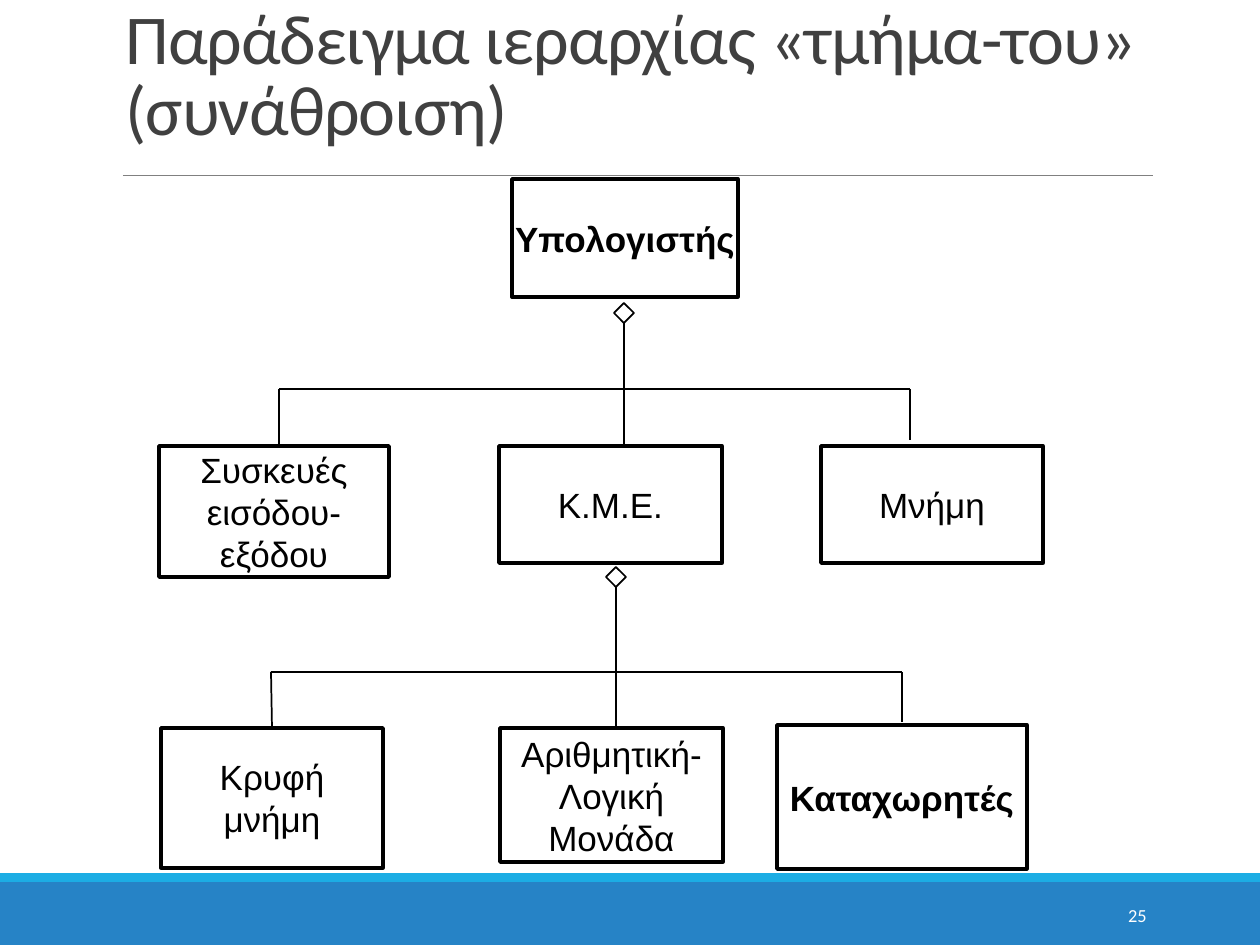
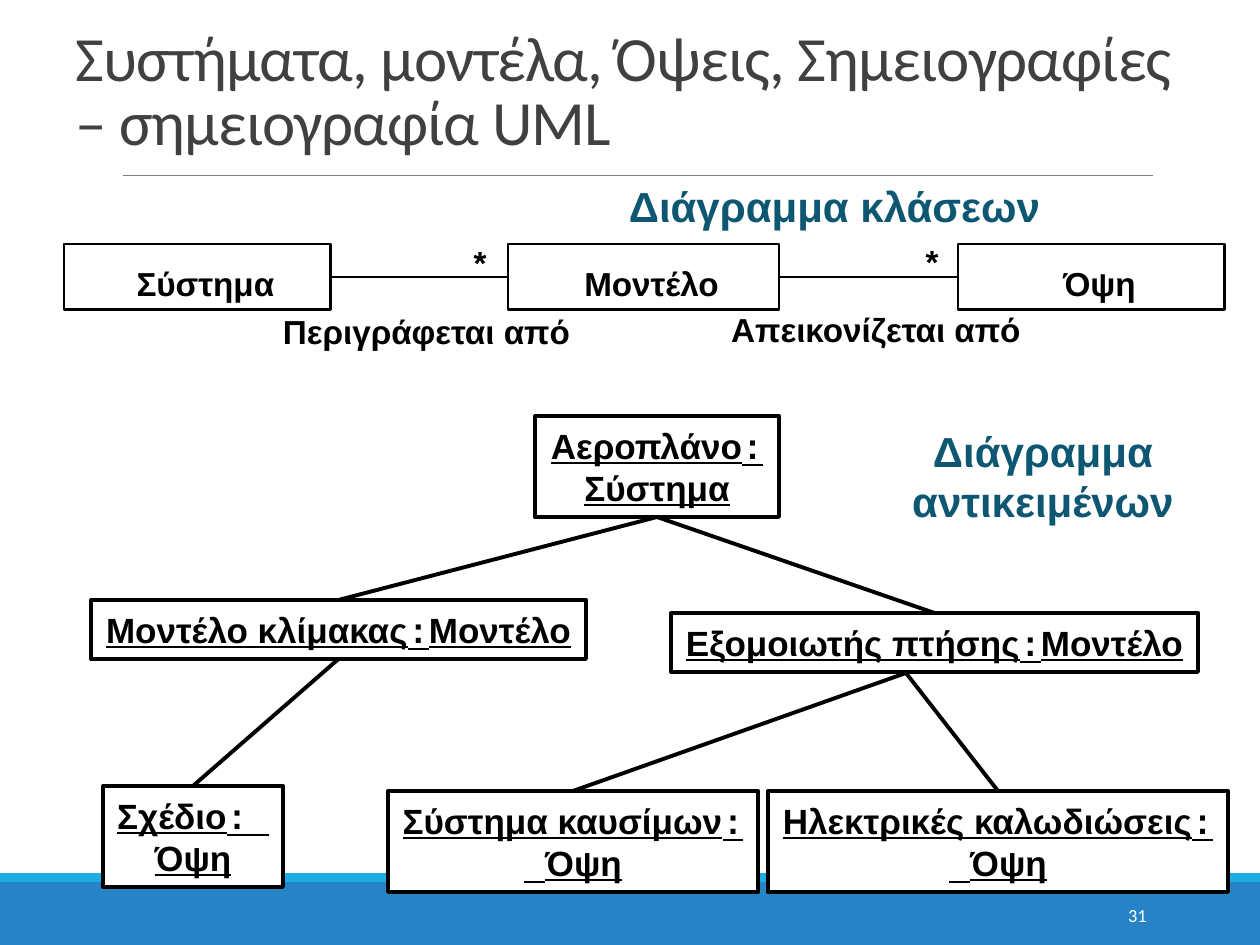
from lxml import etree
from pptx import Presentation
from pptx.dml.color import RGBColor
from pptx.enum.shapes import MSO_CONNECTOR, MSO_SHAPE
from pptx.enum.text import MSO_ANCHOR, PP_ALIGN
from pptx.oxml.ns import qn
from pptx.util import Emu, Pt

RECT, DIAMOND = MSO_SHAPE.RECTANGLE, MSO_SHAPE.DIAMOND
STRAIGHT = MSO_CONNECTOR.STRAIGHT
TOP, MIDDLE, BOTTOM = MSO_ANCHOR.TOP, MSO_ANCHOR.MIDDLE, MSO_ANCHOR.BOTTOM
LEFT, CENTER, RIGHT = PP_ALIGN.LEFT, PP_ALIGN.CENTER, PP_ALIGN.RIGHT
SIDE_TOP, SIDE_LEFT, SIDE_BOTTOM, SIDE_RIGHT = range(4)

PX_PER_INCH = 126
WIDTH, HEIGHT = 1260, 945
BLACK, WHITE = "000000", "FFFFFF"
BLUE, CYAN = "2683C6", "1CADE4"
TITLE_GREY, RULE_GREY, HEADING_TEAL = "404040", "808080", "0E5772"
SANS, BODY, MONO = "Calibri", "Arial", "Courier New"


def px(n):
    return Emu(round(n * 914400 / PX_PER_INCH))


def rgb(hex_color):
    return RGBColor.from_string(hex_color)


def add_run(p, text, size, font=BODY, color=BLACK, bold=False, underline=False):
    r = p.add_run()
    r.text = text
    f = r.font
    f.name, f.size, f.bold, f.underline = font, Pt(size), bold, underline
    f.color.rgb = rgb(color)
    return r


def set_frame(sp, anchor, align, wrap, inset=True):
    """Prepare the text frame and return its first paragraph."""
    tf = sp.text_frame
    tf.word_wrap = wrap
    tf.vertical_anchor = anchor
    if not inset:
        tf.margin_left = tf.margin_right = tf.margin_top = tf.margin_bottom = 0
    p = tf.paragraphs[0]
    p.alignment = align
    return p


def add_text(slide, box, text, size, anchor=MIDDLE, align=CENTER, wrap=True,
             inset=True, **style):
    sp = slide.shapes.add_textbox(*map(px, box))
    p = set_frame(sp, anchor, align, wrap, inset)
    return p, add_run(p, text, size, **style)


def add_label(slide, box, text, font=BODY):
    add_text(slide, box, text, 19, anchor=TOP, wrap=False, inset=False,
             font=font, bold=True)


def add_box(slide, box, line_width=0, fill=None, kind=RECT):
    sp = slide.shapes.add_shape(kind, *map(px, box))
    sp.shadow.inherit = False
    if fill:
        sp.fill.solid()
        sp.fill.fore_color.rgb = rgb(fill)
    else:
        sp.fill.background()
    if line_width:
        sp.line.color.rgb = rgb(BLACK)
        sp.line.width = Pt(line_width)
    else:
        sp.line.fill.background()
    return sp


def add_line(slide, start, end, width, color=BLACK, begin=None, finish=None):
    """Draw a line; begin and finish are (shape, side) pairs to join."""
    line = slide.shapes.add_connector(STRAIGHT, *map(px, start + end))
    line.line.color.rgb = rgb(color)
    line.line.width = Pt(width)
    etree.SubElement(line._element.spPr, qn("a:effectLst"))
    if begin:
        line.begin_connect(*begin)
    if finish:
        line.end_connect(*finish)


def add_base(prs, title, title_box, title_size, number):
    """Add a slide with bands, rule, title and slide number."""
    slide = prs.slides.add_slide(prs.slide_layouts[6])
    add_box(slide, (0, 882, WIDTH, 63), fill=BLUE)
    add_box(slide, (0, 873, WIDTH, 9), fill=CYAN)
    add_line(slide, (123, 175), (1153, 175), 0.5, RULE_GREY)
    p, r = add_text(slide, title_box, title, title_size, anchor=BOTTOM,
                    align=LEFT, font=SANS, color=TITLE_GREY)
    p.line_spacing = 0.85
    r.font._element.set("spc", "-50")
    add_text(slide, (1023, 890, 136, 50), number, 10.5, align=RIGHT,
             font=SANS, color=WHITE)
    return slide


def add_part(slide, box, text, bold=False):
    sp = add_box(slide, box, 2)
    p = set_frame(sp, MIDDLE, CENTER, wrap=not bold)
    add_run(p, text, 20, bold=bold)
    return sp


def add_aggregation(slide, x, top, bar_y, ends, left_part=None):
    """Draw a diamond, its stem and a bar with a drop at each end."""
    left, right = x - 345, x + 286
    left_end, stem_end, right_end = ends
    diamond = add_box(slide, (x - 10, top, 20, 20), 1, kind=DIAMOND)
    add_line(slide, (x, top + 20), (x, stem_end), 1,
             begin=(diamond, SIDE_BOTTOM))
    add_line(slide, (left, bar_y), (right, bar_y), 1)
    add_line(slide, (left, bar_y), (left, left_end), 1,
             finish=left_part and (left_part, SIDE_TOP))
    add_line(slide, (right, bar_y), (right, right_end), 1)


def add_class(slide, x, width, name):
    sp = add_box(slide, (x, 244, width, 66), 1.63)
    add_label(slide, (x + 8, 263, width, 40), name)
    return sp


def add_association(slide, source, target, star_box, caption, caption_box):
    add_line(slide, (0, 0), (0, 0), 1.63,
             begin=(source, SIDE_RIGHT), finish=(target, SIDE_LEFT))
    add_label(slide, star_box, "*", MONO)
    add_label(slide, caption_box, caption)


def add_object(slide, box, name, separator, class_name):
    """Add an underlined "name:class" box; a newline breaks the line."""
    sp = add_box(slide, box, 2.25, WHITE)
    p = set_frame(sp, MIDDLE, CENTER, wrap=False)
    style = {"bold": True, "underline": True}
    add_run(p, name, 20, **style)
    for i, piece in enumerate(separator.split("\n")):
        if i:
            p.add_line_break()
        if piece:
            add_run(p, piece, 20, font=MONO, **style)
    add_run(p, class_name, 20, **style)
    return sp


def add_link(slide, parent, child, start=None):
    """Link a parent's bottom, or a given start point, to a child's top."""
    add_line(slide, start or (0, 0), (0, 0), 2.25,
             begin=None if start else (parent, SIDE_BOTTOM),
             finish=(child, SIDE_TOP))


def add_heading(slide, box, text):
    add_text(slide, box, text, 24, color=HEADING_TEAL, bold=True)


def build_part_hierarchy(prs):
    slide = add_base(prs, "Παράδειγμα ιεραρχίας «τμήμα-του» (συνάθροιση)",
                     (113, 39, 1040, 117), 40, "25")
    add_part(slide, (512, 179, 226, 118), "Υπολογιστής", bold=True)
    add_part(slide, (159, 446, 230, 131), "Συσκευές εισόδου-εξόδου")
    add_part(slide, (499, 446, 223, 117), "Κ.Μ.Ε.")
    add_part(slide, (821, 446, 222, 117), "Μνήμη")
    cache = add_part(slide, (161, 728, 222, 140), "Κρυφή μνήμη")
    add_part(slide, (500, 728, 223, 134), "Αριθμητική-Λογική Μονάδα")
    add_part(slide, (777, 725, 250, 144), "Καταχωρητές", bold=True)
    add_aggregation(slide, 624, 303, 389, (445, 446, 440))
    add_aggregation(slide, 616, 567, 672, (728, 728, 722), cache)


def build_uml_notation(prs):
    slide = add_base(
        prs, "Συστήματα, μοντέλα, Όψεις, Σημειογραφίες – σημειογραφία UML",
        (63, 8, 1134, 157), 36, "31")

    add_heading(slide, (616, 174, 437, 63), "Διάγραμμα κλάσεων")
    system = add_class(slide, 64, 267, "Σύστημα")
    model = add_class(slide, 508, 271, "Μοντέλο")
    view = add_class(slide, 958, 267, "Όψη")
    add_association(slide, system, model, (470, 243, 20, 40),
                    "Περιγράφεται από", (282, 311, 289, 40))
    add_association(slide, model, view, (922, 242, 20, 40),
                    "Απεικονίζεται από", (730, 309, 292, 40))

    add_heading(slide, (878, 422, 330, 107), "Διάγραμμα αντικειμένων")
    plane = add_object(slide, (535, 416, 244, 101), "Αεροπλάνο", ":\n", "Σύστημα")
    scale_model = add_object(slide, (91, 600, 495, 59), "Μοντέλο κλίμακας", ":",
                             "Μοντέλο")
    simulator = add_object(slide, (671, 613, 527, 59), "Εξομοιωτής πτήσης", ":",
                           "Μοντέλο")
    drawing = add_object(slide, (103, 786, 180, 101), "Σχέδιο", ": \n", "Όψη")
    fuel = add_object(slide, (388, 791, 370, 101), "Σύστημα καυσίμων", ":\n ", "Όψη")
    wiring = add_object(slide, (768, 791, 460, 101), "Ηλεκτρικές καλωδιώσεις",
                        ":\n ", "Όψη")
    add_link(slide, plane, scale_model)
    add_link(slide, plane, simulator)
    add_link(slide, scale_model, drawing)
    for child in (fuel, wiring):
        add_link(slide, simulator, child, start=(906, 673))


def main():
    prs = Presentation()
    prs.slide_width, prs.slide_height = px(WIDTH), px(HEIGHT)
    build_part_hierarchy(prs)
    build_uml_notation(prs)
    prs.save("out.pptx")


if __name__ == "__main__":
    main()
